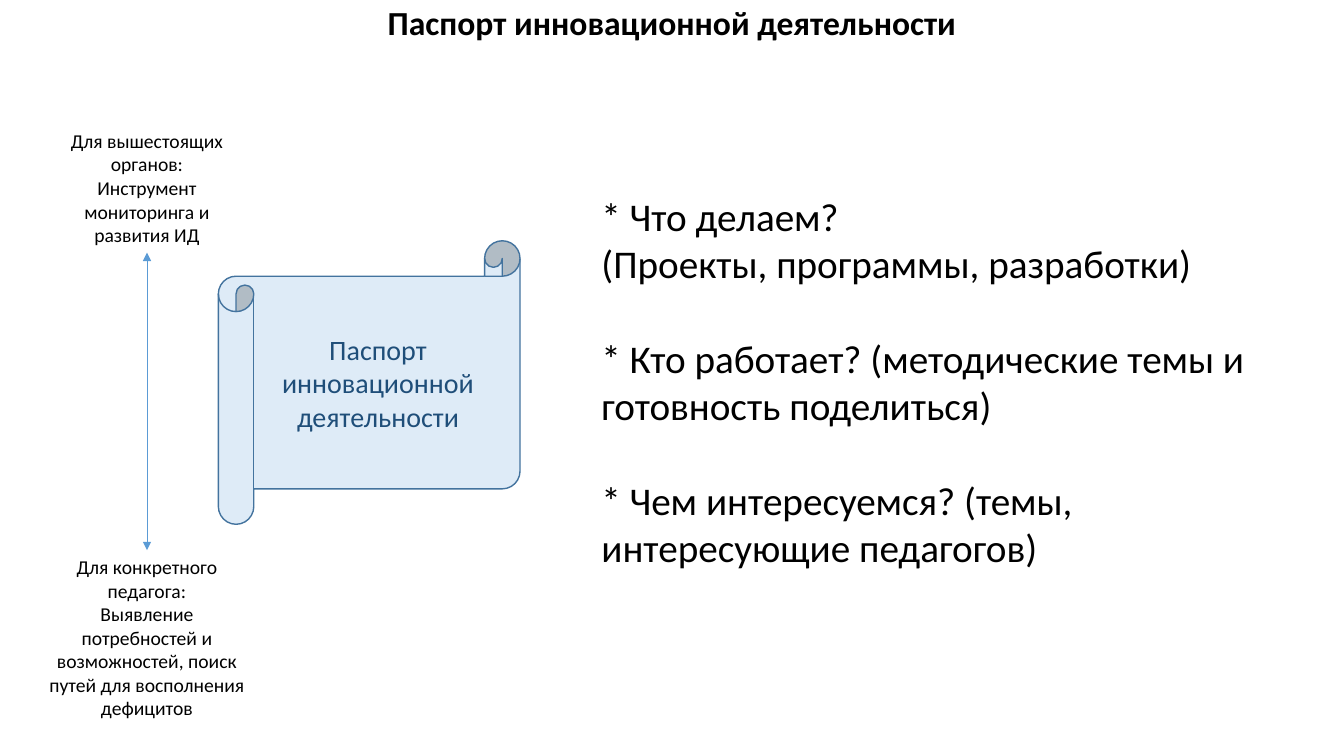
from lxml import etree
from pptx import Presentation
from pptx.dml.color import RGBColor
from pptx.enum.shapes import MSO_CONNECTOR, MSO_SHAPE
from pptx.enum.text import MSO_ANCHOR, MSO_AUTO_SIZE, PP_ALIGN
from pptx.oxml.ns import qn
from pptx.util import Pt

FONT = "Calibri"
BLACK = RGBColor(0x00, 0x00, 0x00)
PALE_BLUE = RGBColor(0xDE, 0xEB, 0xF7)
SCROLL_OUTLINE = RGBColor(0x43, 0x73, 0x9E)
DARK_BLUE = RGBColor(0x1F, 0x4E, 0x79)
ARROW_BLUE = RGBColor(0x5B, 0x9B, 0xD5)

LEFT, CENTER = PP_ALIGN.LEFT, PP_ALIGN.CENTER
TOP, MIDDLE = MSO_ANCHOR.TOP, MSO_ANCHOR.MIDDLE
NO_FIT, FIT_SHAPE = MSO_AUTO_SIZE.NONE, MSO_AUTO_SIZE.SHAPE_TO_FIT_TEXT
SCROLL = MSO_SHAPE.HORIZONTAL_SCROLL
STRAIGHT = MSO_CONNECTOR.STRAIGHT
TOP_SIDE, BOTTOM_SIDE = 0, 2

AXIS_X = 105
TITLE_ONLY = 5
HEADING = "Паспорт инновационной деятельности"
QUESTIONS = [
    "* Что делаем?",
    "(Проекты, программы, разработки)",
    "* Кто работает? (методические темы и готовность поделиться)",
    "* Чем интересуемся? (темы, интересующие педагогов)",
]


def write(shape, lines, size, color=BLACK, align=CENTER, anchor=TOP, fit=NO_FIT, bold=False):
    frame = shape.text_frame
    frame.text = "\n".join(lines)
    frame.word_wrap = True
    frame.auto_size = fit
    frame.vertical_anchor = anchor
    for paragraph in frame.paragraphs:
        paragraph.alignment = align
        font = paragraph.font
        font.name, font.size, font.bold = FONT, Pt(size), bold
        font.color.rgb = color


def add_title(slide):
    title = slide.shapes.title
    title.left, title.top, title.width, title.height = Pt(0), Pt(-2), Pt(960), Pt(36)
    write(title, [HEADING], 24, bold=True)


def add_text(slide, left, top, width, height, lines, size, align=CENTER):
    box = slide.shapes.add_textbox(Pt(left), Pt(top), Pt(width), Pt(height))
    write(box, lines, size, align=align, fit=FIT_SHAPE)
    return box


def add_axis_label(slide, top, width, height, lines):
    """Add a caption centred on the vertical arrow."""
    return add_text(slide, AXIS_X - width / 2, top, width, height, lines, 14)


def add_scroll(slide):
    scroll = slide.shapes.add_shape(SCROLL, Pt(156), Pt(172), Pt(215.5), Pt(202.5))
    scroll.shadow.inherit = False
    scroll.fill.solid()
    scroll.fill.fore_color.rgb = PALE_BLUE
    scroll.line.color.rgb = SCROLL_OUTLINE
    scroll.line.width = Pt(1)
    write(scroll, [HEADING], 20, DARK_BLUE, anchor=MIDDLE)


def join_with_double_arrow(slide, upper, lower):
    arrow = slide.shapes.add_connector(STRAIGHT, 0, 0, 0, 0)
    arrow.begin_connect(upper, BOTTOM_SIDE)
    arrow.end_connect(lower, TOP_SIDE)
    arrow.line.color.rgb = ARROW_BLUE
    arrow.line.width = Pt(0.5)
    outline = arrow.line._get_or_add_ln()
    for end in ("a:headEnd", "a:tailEnd"):
        etree.SubElement(outline, qn(end), type="triangle")
    etree.SubElement(arrow._element.spPr, qn("a:effectLst"))


def add_questions(slide):
    box = add_text(slide, 422.5, 134, 509, 278.5, QUESTIONS, 28, LEFT)
    for paragraph in box.text_frame.paragraphs[2:]:
        paragraph.space_before = Pt(34)


def main():
    presentation = Presentation()
    presentation.slide_width, presentation.slide_height = Pt(960), Pt(540)
    slide = presentation.slides.add_slide(presentation.slide_layouts[TITLE_ONLY])
    add_title(slide)
    add_scroll(slide)
    authorities = add_axis_label(slide, 88.5, 155, 92, [
        "Для вышестоящих органов:",
        "Инструмент мониторинга и развития ИД",
    ])
    teacher = add_axis_label(slide, 393, 166, 109, [
        "Для конкретного педагога:",
        "Выявление потребностей и возможностей, поиск путей для восполнения дефицитов",
    ])
    join_with_double_arrow(slide, authorities, teacher)
    add_questions(slide)
    presentation.save("out.pptx")


if __name__ == "__main__":
    main()
